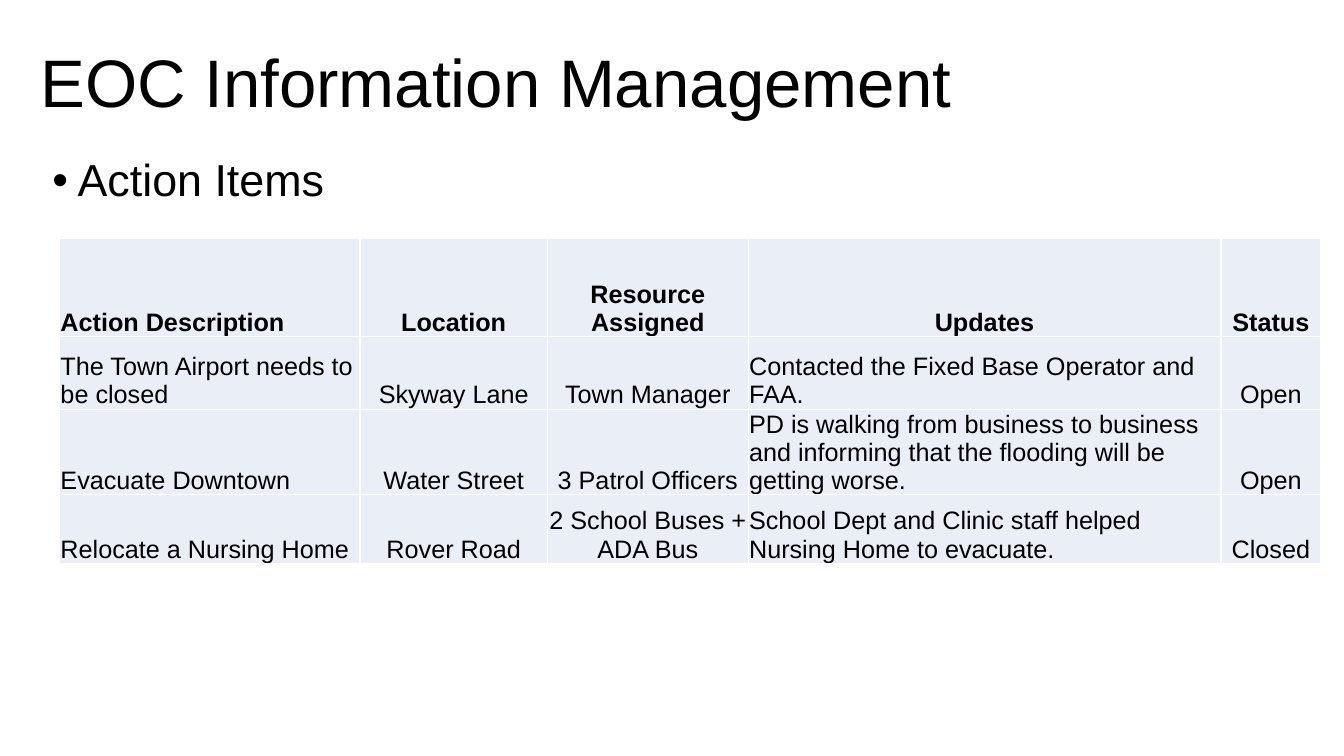
from dataclasses import dataclass

from lxml import etree
from pptx import Presentation
from pptx.dml.color import RGBColor
from pptx.enum import text as t
from pptx.oxml import ns
from pptx.util import Inches, Pt


@dataclass(frozen=True)
class Theme:
    font: str = "Arial"
    ink: RGBColor = RGBColor(0, 0, 0)
    cell: RGBColor = RGBColor(0xEA, 0xEF, 0xF7)
    border: str = "FFFFFF"
    title_size: int = 48
    bullet_size: int = 32
    table_size: int = 18


THEME = Theme()
LEFT, CENTER = t.PP_ALIGN.LEFT, t.PP_ALIGN.CENTER

COLUMN_WIDTHS = [2.98, 1.86, 1.99, 4.69, 0.99]
ROW_HEIGHTS = [0.97, 0.72, 0.69, 0.68]
HEADER_ALIGN = [LEFT, CENTER, CENTER, CENTER, CENTER]
BODY_ALIGN = [LEFT, CENTER, CENTER, LEFT, CENTER]
ACTIONS = [
    ["Action Description", "Location", "Resource Assigned", "Updates", "Status"],
    ["The Town Airport needs to be closed", "Skyway Lane", "Town Manager",
     "Contacted the Fixed Base Operator and FAA.", "Open"],
    ["Evacuate Downtown", "Water Street", "3 Patrol Officers",
     "PD is walking from business to business and informing that the flooding "
     "will be getting worse.", "Open"],
    ["Relocate a Nursing Home", "Rover Road", "2 School Buses + ADA Bus",
     "School Dept and Clinic staff helped Nursing Home to evacuate.", "Closed"],
]


def style_text(paragraph, size, align=LEFT, bold=False):
    paragraph.alignment = align
    for run in paragraph.runs:
        run.font.name = THEME.font
        run.font.size = Pt(size)
        run.font.bold = bold
        run.font.color.rgb = THEME.ink


def fill_placeholder(placeholder, box, wording, size, anchor):
    placeholder.left, placeholder.top, placeholder.width, placeholder.height = map(Inches, box)
    frame = placeholder.text_frame
    frame.text = wording
    frame.word_wrap = True
    frame.auto_size = t.MSO_AUTO_SIZE.NONE
    frame.vertical_anchor = anchor
    paragraph = frame.paragraphs[0]
    paragraph.line_spacing = 0.9
    paragraph.space_before = Pt(0)
    style_text(paragraph, size)
    return paragraph


def add_title(slide, box):
    fill_placeholder(slide.shapes.title, box, "EOC Information Management",
                     THEME.title_size, t.MSO_ANCHOR.MIDDLE)


def add_topic(slide, box):
    topic = fill_placeholder(slide.placeholders[1], box, "Action Items",
                             THEME.bullet_size, t.MSO_ANCHOR.TOP)
    properties = topic._p.get_or_add_pPr()
    properties.set("marL", str(Inches(0.25)))
    properties.set("indent", str(-Inches(0.25)))
    etree.SubElement(properties, ns.qn("a:buFont"), typeface=THEME.font)
    etree.SubElement(properties, ns.qn("a:buChar"), char="•")


def add_borders(cell):
    properties = cell._tc.get_or_add_tcPr()
    for side in ("a:lnL", "a:lnR", "a:lnT", "a:lnB"):
        line = etree.SubElement(properties, ns.qn(side), w=str(Pt(1)))
        solid = etree.SubElement(line, ns.qn("a:solidFill"))
        etree.SubElement(solid, ns.qn("a:srgbClr"), val=THEME.border)


def fill_cell(cell, wording, align, bold):
    add_borders(cell)
    cell.fill.solid()
    cell.fill.fore_color.rgb = THEME.cell
    cell.margin_left = cell.margin_right = cell.margin_top = Inches(0.01)
    cell.margin_bottom = 0
    cell.vertical_anchor = t.MSO_ANCHOR.BOTTOM
    cell.text_frame.text = wording
    style_text(cell.text_frame.paragraphs[0], THEME.table_size, align, bold)


def add_action_table(slide, left, top):
    table = slide.shapes.add_table(
        len(ROW_HEIGHTS), len(COLUMN_WIDTHS), Inches(left), Inches(top),
        Inches(sum(COLUMN_WIDTHS)), Inches(sum(ROW_HEIGHTS))).table
    for column, width in zip(table.columns, COLUMN_WIDTHS):
        column.width = Inches(width)
    for row, height in zip(table.rows, ROW_HEIGHTS):
        row.height = Inches(height)
    for r, action in enumerate(ACTIONS):
        aligns = BODY_ALIGN if r else HEADER_ALIGN
        for c, (wording, align) in enumerate(zip(action, aligns)):
            fill_cell(table.cell(r, c), wording, align, bold=r == 0)


def main():
    deck = Presentation()
    deck.slide_width, deck.slide_height = Inches(13.33), Inches(7.5)
    slide = deck.slides.add_slide(deck.slide_layouts[1])

    # Heading and topic
    add_title(slide, (0.3, 0.32, 12.81, 1.06))
    add_topic(slide, (0.42, 1.52, 6.3, 0.85))

    # Action items
    add_action_table(slide, 0.59, 2.37)
    deck.save("out.pptx")


if __name__ == "__main__":
    main()
